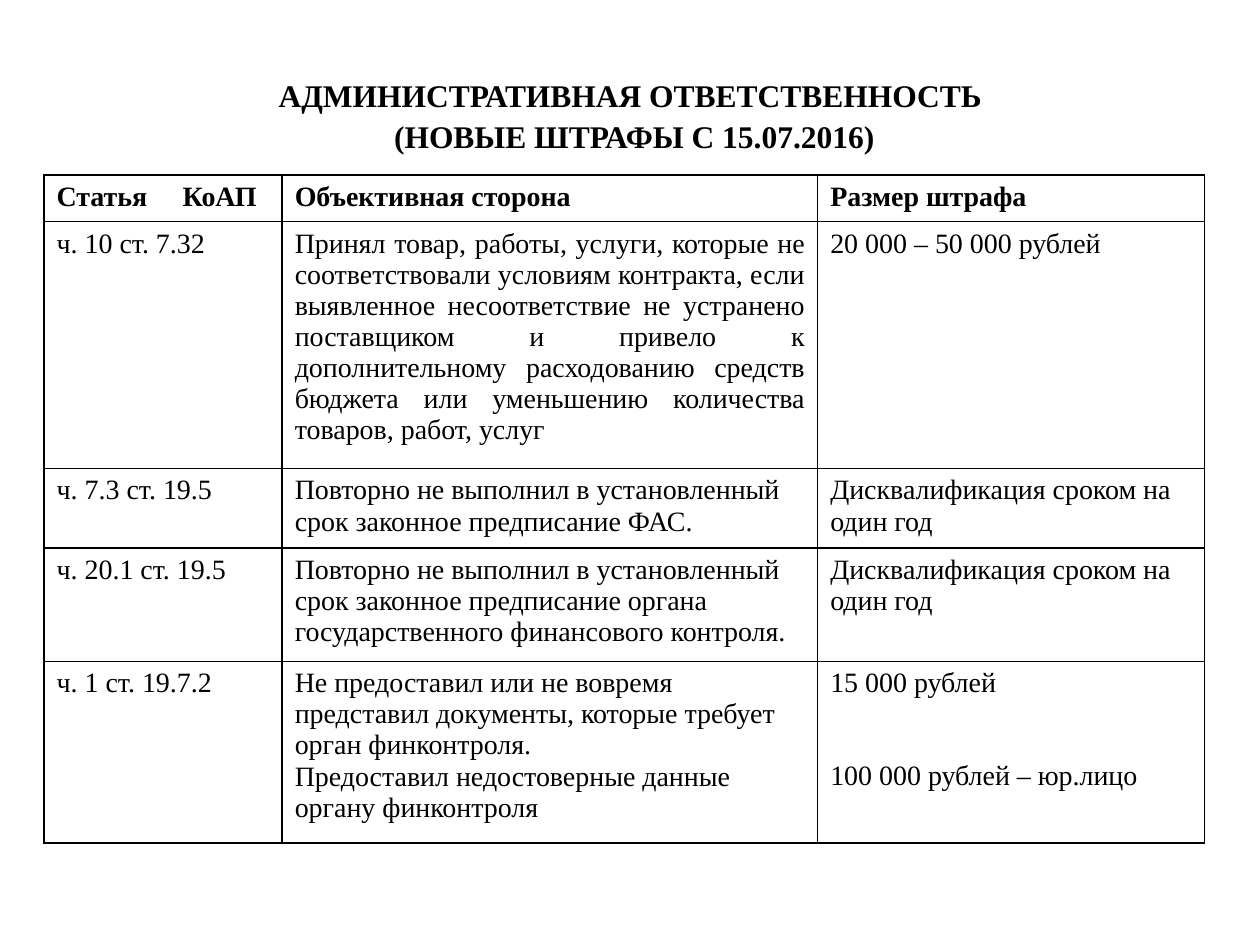
from pptx import Presentation
from pptx.dml.color import RGBColor
from pptx.enum.text import MSO_ANCHOR, MSO_AUTO_SIZE, PP_ALIGN as Align
from pptx.oxml import parse_xml
from pptx.oxml.ns import nsdecls
from pptx.util import Inches, Pt

TITLE = ["АДМИНИСТРАТИВНАЯ ОТВЕТСТВЕННОСТЬ ", "(НОВЫЕ ШТРАФЫ С 15.07.2016)"]
COLUMN_WIDTHS = [1.89, 4.25, 3.07]
ROW_HEIGHTS = [0.37, 1.96, 0.63, 0.9, 1.44]
FINES = [
    ["Статья \tКоАП", "Объективная сторона \t", "Размер штрафа"],
    ["ч. 10 ст. 7.32",
     "Принял товар, работы, услуги, которые не соответствовали условиям контракта, "
     "если выявленное несоответствие не устранено поставщиком и привело к "
     "дополнительному расходованию средств бюджета или уменьшению количества "
     "товаров, работ, услуг",
     "20 000 – 50 000 рублей"],
    ["ч. 7.3 ст. 19.5",
     "Повторно не выполнил в установленный срок законное предписание ФАС.",
     "Дисквалификация сроком на один год"],
    ["ч. 20.1 ст. 19.5",
     "Повторно не выполнил в установленный срок законное предписание органа "
     "государственного финансового контроля.",
     "Дисквалификация сроком на один год"],
    ["ч. 1 ст. 19.7.2",
     "Не предоставил или не вовремя представил документы, которые требует орган "
     "финконтроля.\nПредоставил недостоверные данные органу финконтроля",
     "15 000 рублей\n100 000 рублей – юр.лицо"],
]


def color(value):
    return RGBColor.from_string(value)


def apply_format(target, values):
    for name, value in values.items():
        setattr(target, name, value)


class FineSlide:
    font = "Times New Roman"
    ink = "000000"
    border_width = Pt(1)

    def __init__(self, deck):
        self.page = deck.slides.add_slide(deck.slide_layouts[5])

    def fill_text(self, frame, lines, size, bold=False, **para_format):
        for index, line in enumerate(lines):
            para = frame.paragraphs[0] if index == 0 else frame.add_paragraph()
            apply_format(para, para_format)
            span = para.add_run()
            span.text = line
            apply_format(span.font, {"name": self.font, "size": Pt(size), "bold": bold})
            span.font.color.rgb = color(self.ink)

    def title(self, lines, left, top, width, height):
        box = self.page.shapes.title
        apply_format(box, {"left": Inches(left), "top": Inches(top),
                           "width": Inches(width), "height": Inches(height)})
        apply_format(box.text_frame, {"word_wrap": True,
                                      "auto_size": MSO_AUTO_SIZE.NONE,
                                      "vertical_anchor": MSO_ANCHOR.TOP})
        self.fill_text(box.text_frame, lines, 18, bold=True,
                       alignment=Align.CENTER, line_spacing=1.1)

    def borders(self, cell):
        properties = cell._tc.get_or_add_tcPr()
        for index, side in enumerate(("lnL", "lnR", "lnT", "lnB")):
            properties.insert(index, parse_xml(
                f'<a:{side} {nsdecls("a")} w="{self.border_width}"><a:solidFill>'
                f'<a:srgbClr val="{self.ink}"/></a:solidFill></a:{side}>'))

    def table(self, rows, left, top, widths, heights):
        grid = self.page.shapes.add_table(
            len(rows), len(widths), Inches(left), Inches(top),
            Inches(sum(widths)), Inches(sum(heights))).table
        apply_format(grid, {"first_row": False, "horz_banding": False})
        for column, width in zip(grid.columns, widths):
            column.width = Inches(width)
        for row, height in zip(grid.rows, heights):
            row.height = Inches(height)
        for row_index, texts in enumerate(rows):
            for column_index, text in enumerate(texts):
                cell = grid.cell(row_index, column_index)
                cell.fill.background()
                self.borders(cell)
                self.fill_text(cell.text_frame, text.split("\n"), 16,
                               bold=row_index == 0, alignment=Align.LEFT)
        return grid


def main():
    deck = Presentation()
    apply_format(deck, {"slide_width": Inches(10), "slide_height": Inches(7.5)})
    slide = FineSlide(deck)
    slide.title(TITLE, 0.35, 0.52, 9.37, 0.71)
    grid = slide.table(FINES, 0.35, 1.39, COLUMN_WIDTHS, ROW_HEIGHTS)
    grid.cell(1, 1).text_frame.paragraphs[0].alignment = Align.JUSTIFY
    grid.cell(4, 2).text_frame.paragraphs[1].space_before = Pt(35.5)
    deck.save("out.pptx")


if __name__ == "__main__":
    main()
